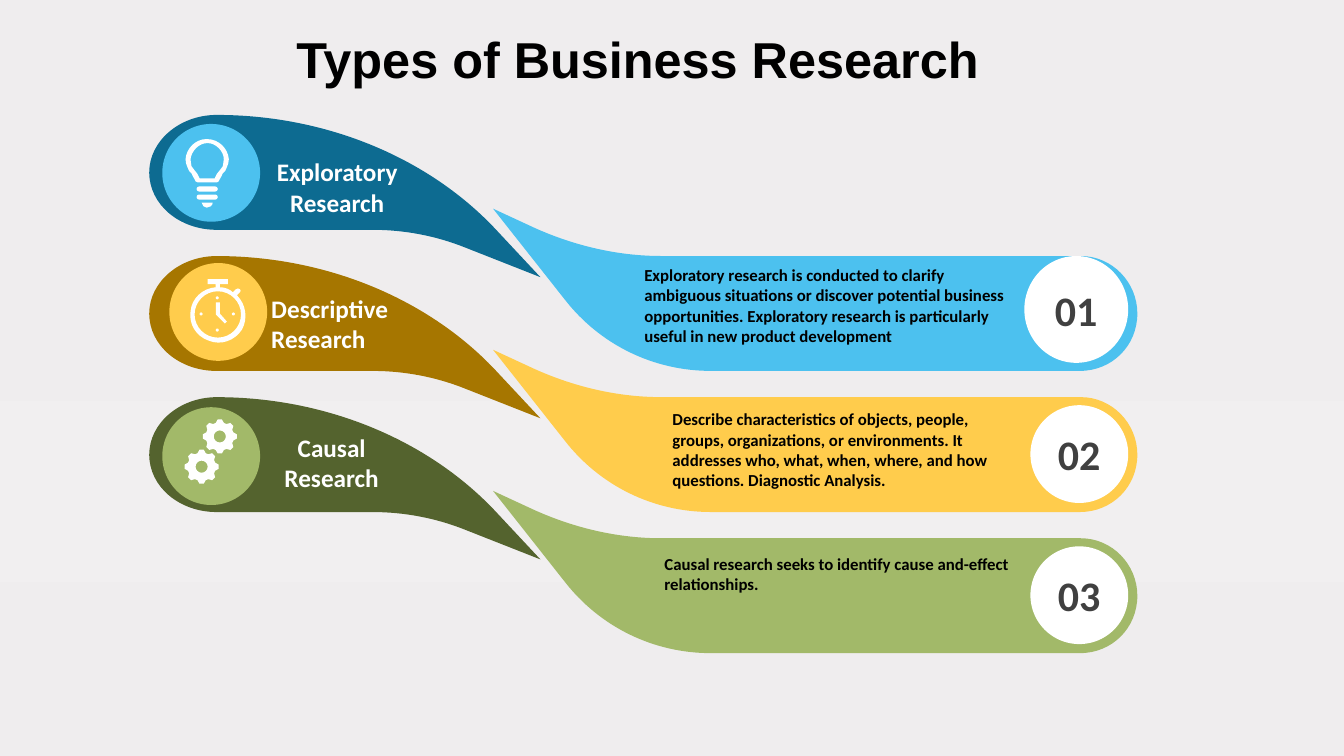
from copy import deepcopy
from itertools import islice
from math import cos, radians, sin

from pptx import Presentation
from pptx import util as u
from pptx.dml.color import RGBColor
from pptx.enum import shapes, text
from pptx.oxml.xmlchemy import OxmlElement

BLACK = RGBColor(0x00, 0x00, 0x00)
WHITE = RGBColor(0xFF, 0xFF, 0xFF)
GREY = RGBColor(0x40, 0x40, 0x40)
DARK_BLUE = RGBColor(0x0D, 0x6B, 0x91)
BLUE = RGBColor(0x4C, 0xC1, 0xEF)
BROWN = RGBColor(0xA6, 0x76, 0x00)
YELLOW = RGBColor(0xFF, 0xCC, 0x4C)
DARK_GREEN = RGBColor(0x54, 0x63, 0x2E)
GREEN = RGBColor(0xA2, 0xB9, 0x69)
BACKDROP = [
    (0, RGBColor(0xEF, 0xED, 0xEE)),
    (0.53, RGBColor(0xF1, 0xEF, 0xF0)),
    (0.77, RGBColor(0xEF, 0xED, 0xEE)),
    (1, RGBColor(0xEF, 0xEB, 0xEC)),
]

COLUMNS, ROWS = 13.33, 7.5
FIRST_ROW, ROW_STEP, RIBBON_DROP = 1.14, 1.4, 0.93
DISC = 0.97

LEAF = [(4.6, 1.31), (4.32, 1.2, 4.01, 1.14, 3.7, 1.14), (2.15, 1.14),
        (1.78, 1.14, 1.48, 0.89, 1.48, 0.57), (1.48, 0.26, 1.78, 0, 2.15, 0),
        (3.24, 0, 4.27, 0.43, 4.94, 1.16), (5.36, 1.61)]
RIBBON = [(11.28, 1.04), (11.28, 1.36, 11.03, 1.61, 10.71, 1.61), (7.05, 1.61),
          (6.48, 1.61, 5.95, 1.35, 5.6, 0.9), (4.89, 0), (5.3, 0.19),
          (5.7, 0.37, 6.13, 0.47, 6.56, 0.47), (10.72, 0.47),
          (11.03, 0.47, 11.28, 0.73, 11.28, 1.04)]
BULB = [(2.05, 1.38), (1.94, 1.38, 1.85, 1.47, 1.84, 1.58),
        (1.84, 1.61, 1.85, 1.64, 1.86, 1.66), (1.87, 1.69, 1.88, 1.71, 1.9, 1.72),
        (1.91, 1.75, 1.94, 1.79, 1.94, 1.8), (1.95, 1.81, 1.95, 1.81, 1.96, 1.81),
        (2.15, 1.81), (2.16, 1.81, 2.16, 1.81, 2.17, 1.8),
        (2.17, 1.79, 2.2, 1.75, 2.21, 1.72), (2.23, 1.71, 2.24, 1.69, 2.25, 1.66),
        (2.26, 1.64, 2.27, 1.61, 2.27, 1.58), (2.26, 1.47, 2.17, 1.38, 2.05, 1.38)]
BULB_HOLLOW = [(2.22, 1.58), (2.22, 1.61, 2.21, 1.63, 2.21, 1.65),
               (2.2, 1.66, 2.19, 1.68, 2.18, 1.69), (2.16, 1.71, 2.14, 1.74, 2.13, 1.77),
               (1.98, 1.77), (1.97, 1.74, 1.95, 1.71, 1.93, 1.69),
               (1.92, 1.68, 1.91, 1.66, 1.9, 1.65), (1.9, 1.63, 1.89, 1.61, 1.89, 1.58),
               (1.9, 1.5, 1.97, 1.42, 2.06, 1.42), (2.14, 1.42, 2.22, 1.5, 2.22, 1.58)]
BULB_TIP = [(2, 2.01), (2, 2.04, 2.03, 2.06, 2.05, 2.06), (2.08, 2.06, 2.11, 2.04, 2.11, 2.01)]
WATCH = [(2.35, 2.93), (2.38, 2.9), (2.39, 2.89, 2.39, 2.88, 2.38, 2.87),
         (2.37, 2.86, 2.35, 2.86, 2.34, 2.87), (2.31, 2.9),
         (2.28, 2.87, 2.23, 2.85, 2.18, 2.85), (2.18, 2.82), (2.26, 2.82), (2.26, 2.77),
         (2.06, 2.77), (2.06, 2.82), (2.14, 2.82), (2.14, 2.85),
         (2.01, 2.86, 1.9, 2.96, 1.89, 3.09), (1.87, 3.22, 1.95, 3.34, 2.07, 3.38),
         (2.19, 3.43, 2.33, 3.38, 2.4, 3.27), (2.46, 3.16, 2.44, 3.02, 2.35, 2.93)]
WATCH_HANDS = [(2.18, 3), (2.14, 3), (2.14, 3.12), (2.23, 3.21), (2.25, 3.19), (2.18, 3.11)]


def polar(center, radius, degrees):
    angle = radians(degrees)
    return center[0] + radius * cos(angle), center[1] + radius * sin(angle)


def ring(center, radius):
    x, y = center
    r, k = radius, radius * 0.55
    return [(x + r, y), (x + r, y + k, x + k, y + r, x, y + r),
            (x - k, y + r, x - r, y + k, x - r, y), (x - r, y - k, x - k, y - r, x, y - r),
            (x + k, y - r, x + r, y - k, x + r, y)]


def gear(center):
    tooth = [(-17, 0.14), (-7, 0.17), (7, 0.17), (17, 0.14)]
    teeth = [polar(center, radius, turn + offset)
             for turn in range(0, 360, 45) for offset, radius in tooth]
    return [teeth, ring(center, 0.06)]


def bend(shape, contours):
    lines = iter(shape.element.xpath(".//a:lnTo"))
    for contour in contours:
        for segment in contour[1:]:
            group = list(islice(lines, len(segment) // 2))
            if len(group) == 3:
                curve = OxmlElement("a:cubicBezTo")
                group[0].addprevious(curve)
                for line in group:
                    curve.append(line[0])
                    line.getparent().remove(line)


def write(frame, content, size=12, color=BLACK, font="Calibri", align=text.PP_ALIGN.LEFT,
          anchor=text.MSO_ANCHOR.TOP, margins=(0, 0.05, 0, 0.05), spacing=1.0,
          fit=text.MSO_AUTO_SIZE.NONE):
    frame.word_wrap = True
    frame.auto_size = fit
    frame.vertical_anchor = anchor
    (frame.margin_left, frame.margin_top,
     frame.margin_right, frame.margin_bottom) = map(u.Inches, margins)
    paragraph = frame.paragraphs[0]
    paragraph.alignment = align
    paragraph.line_spacing = spacing
    run = paragraph.add_run()
    run.text = content
    run.font.name, run.font.size, run.font.bold = font, u.Pt(size), True
    run.font.color.rgb = color


class Canvas:
    def __init__(self, presentation):
        self.slide = presentation.slides.add_slide(presentation.slide_layouts[5])
        self.column = presentation.slide_width / COLUMNS
        self.row = presentation.slide_height / ROWS

    def cells(self, left, top, width, height):
        return [round(length * unit) for length, unit in
                zip((left, top, width, height), (self.column, self.row) * 2)]

    def paint(self, shape, color):
        shape.shadow.inherit = False
        shape.fill.solid()
        shape.fill.fore_color.rgb = color
        shape.line.fill.background()
        return shape

    def backdrop(self, stops):
        fill = self.slide.background.fill
        fill.gradient()
        fill.gradient_angle = 270
        marks = self.slide.element.xpath(".//a:gsLst/a:gs")
        for _ in stops[len(marks):]:
            marks[-1].addnext(deepcopy(marks[-1]))
        for mark, (position, color) in zip(fill.gradient_stops, stops):
            mark.position, mark.color.rgb = position, color

    def title(self, content, place):
        title = self.slide.shapes.title
        title.left, title.top, title.width, title.height = self.cells(*place)
        write(title.text_frame, content, size=36, font="Arial", spacing=0.9,
              margins=(0.1, 0.05, 0, 0.05))

    def label(self, content, place, **style):
        box = self.slide.shapes.add_textbox(*self.cells(*place))
        write(box.text_frame, content, fit=text.MSO_AUTO_SIZE.SHAPE_TO_FIT_TEXT, **style)

    def preset(self, kind, place, color):
        return self.paint(self.slide.shapes.add_shape(kind, *self.cells(*place)), color)

    def disc(self, place, color):
        return self.preset(shapes.MSO_SHAPE.OVAL, place, color)

    def outline(self, contours, color, drop=0):
        builder = None
        for contour in contours:
            points = [(round(x * self.column), round((y + drop) * self.row))
                      for segment in contour for x, y in zip(segment[::2], segment[1::2])]
            if builder is None:
                builder = self.slide.shapes.build_freeform(*points[0], scale=1.0)
            else:
                builder.move_to(*points[0])
            builder.add_line_segments(points[1:], close=True)
        shape = self.paint(builder.convert_to_shape(), color)
        bend(shape, contours)

    def bulb(self):
        self.outline([BULB, BULB_HOLLOW], WHITE)
        for top in (1.85, 1.93):
            bar = self.preset(shapes.MSO_SHAPE.ROUNDED_RECTANGLE, (1.95, top, 0.21, 0.05), WHITE)
            bar.adjustments[0] = 0.5
        self.outline([BULB_TIP], WHITE)

    def stopwatch(self):
        center = (2.16, 3.12)
        self.outline([WATCH, ring(center, 0.23)], WHITE)
        self.outline([WATCH_HANDS], WHITE)
        for degrees in range(0, 360, 90):
            x, y = polar(center, 0.16, degrees)
            self.disc((x - 0.02, y - 0.02, 0.03, 0.03), WHITE)

    def gears(self):
        for center in ((2.18, 4.33), (2, 4.63)):
            self.outline(gear(center), WHITE)


def main():
    presentation = Presentation()
    presentation.slide_width, presentation.slide_height = u.Inches(COLUMNS), u.Inches(ROWS)
    canvas = Canvas(presentation)
    canvas.backdrop(BACKDROP)
    canvas.title("Types of Business Research", (2.84, 0.3, 10.4, 0.81))
    center, left = text.PP_ALIGN.CENTER, text.PP_ALIGN.LEFT
    middle = text.MSO_ANCHOR.MIDDLE
    types = [
        ("Exploratory Research", (2.71, 1.5, 1.27, 0.71), center, DARK_BLUE, BLUE,
         (1.61, 1.23), canvas.bulb, (10.16, 2.54, 1.03, 1.06), (6.39, 2.58, 3.68, 0.91),
         "Exploratory research is conducted to clarify ambiguous situations or discover potential "
         "business opportunities. Exploratory research is particularly useful in new product "
         "development"),
        ("Descriptive Research", (2.69, 2.85, 1.62, 0.71), left, BROWN, YELLOW,
         (1.68, 2.61), canvas.stopwatch, (10.22, 4.02, DISC, DISC), (6.67, 4.01, 3.47, 0.91),
         "Describe characteristics of objects, people, groups, organizations, or environments. "
         "It addresses who, what, when, where, and how questions. Diagnostic Analysis."),
        ("Causal Research", (2.59, 4.23, 1.4, 0.71), center, DARK_GREEN, GREEN,
         (1.61, 4.04), canvas.gears, (10.22, 5.42, DISC, DISC), (6.59, 5.44, 3.44, 0.5),
         "Causal research seeks to identify cause and-effect relationships."),
    ]
    for index, (name, name_place, align, dark, light, disc_corner, draw_icon,
                number_place, detail_place, detail) in enumerate(types):
        drop = FIRST_ROW + index * ROW_STEP
        canvas.outline([LEAF], dark, drop)
        canvas.outline([RIBBON], light, drop + RIBBON_DROP)
        canvas.disc((*disc_corner, DISC, DISC), light)
        draw_icon()
        canvas.label(name, name_place, size=18, color=WHITE, align=align, anchor=middle)
        number = canvas.disc(number_place, WHITE)
        write(number.text_frame, f"{index + 1:02}", size=30, color=GREY, align=center,
              anchor=middle, margins=(0.04,) * 4)
        canvas.label(detail, detail_place)
    presentation.save("out.pptx")


if __name__ == "__main__":
    main()
